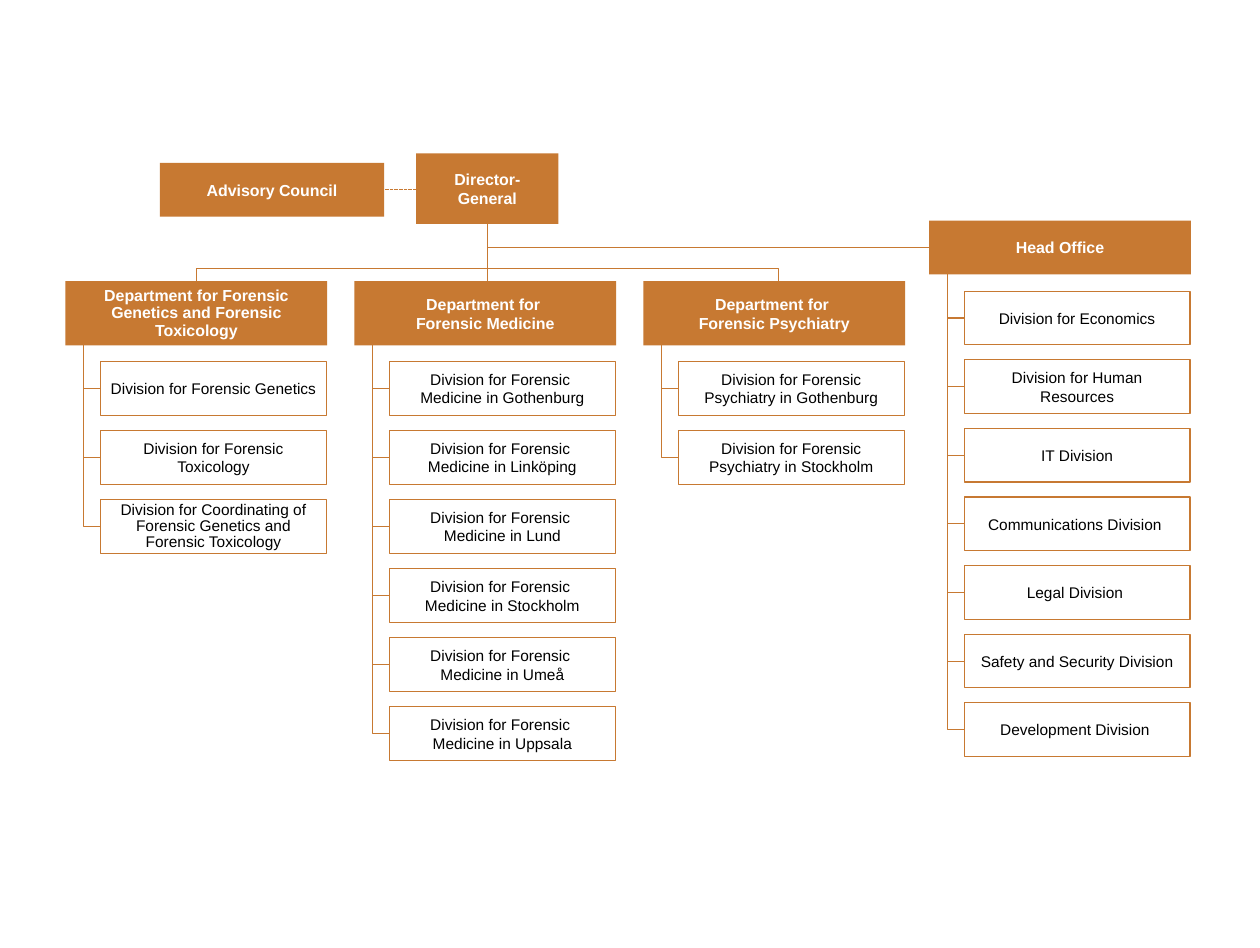
from lxml.etree import SubElement
from pptx import Presentation
from pptx.dml.color import RGBColor
from pptx.enum.dml import MSO_LINE
from pptx.enum.shapes import MSO_CONNECTOR, MSO_SHAPE
from pptx.enum.text import MSO_ANCHOR, PP_ALIGN
from pptx.oxml.ns import qn
from pptx.util import Cm, Pt

UNIT_WIDTH, DIVISION_WIDTH, DIVISION_INDENT = 5.8, 5.0, 0.78
ROW_HEIGHT = 1.19
DEPARTMENT_LEFT, DEPARTMENT_PITCH = 1.45, 6.4
DEPARTMENT_TOP, DEPARTMENT_HEIGHT = 6.23, 1.42
TRUNK_INDENT = 0.4
ROOT_X, BUS_Y, BUS_REACH = 10.8, 5.95, 7.09
MEDICINE_CITIES = ["Gothenburg", "Linköping", "Lund", "Stockholm", "Umeå", "Uppsala"]

DEPARTMENTS = [
    ("Department for Forensic Genetics and Forensic Toxicology", 11, [
        ("Division for Forensic Genetics", None),
        ("Division for Forensic Toxicology", None),
        ("Division for Coordinating of Forensic Genetics and Forensic Toxicology", 10),
    ]),
    ("Department for \vForensic Medicine", None,
     [(f"Division for Forensic \vMedicine in {city}", None) for city in MEDICINE_CITIES]),
    ("Department for \vForensic Psychiatry", None,
     [(f"Division for Forensic Psychiatry in {city}", None)
      for city in ("Gothenburg", "Stockholm")]),
]
HEAD_OFFICE_DIVISIONS = [
    (name, None) for name in (
        "Division for Economics", "Division for Human Resources", "IT Division",
        "Communications Division ", "Legal Division ",
        "Safety and Security Division", "Development Division ")
]


def rgb(hex_colour):
    """Turn a hex string into a colour."""
    return RGBColor.from_string(hex_colour)


class OrgChart:
    """Draws organisation chart elements on one slide in one style."""

    accent, paper, ink = "C77932", "FFFFFF", "000000"
    font_name = "Arial"

    def __init__(self, slide):
        """Keep the slide to draw on."""
        self.shapes = slide.shapes

    def line(self, x1, y1, x2, y2, kind=MSO_CONNECTOR.STRAIGHT):
        """Draw a thin connector and return it."""
        line = self.shapes.add_connector(kind, Cm(x1), Cm(y1), Cm(x2), Cm(y2))
        line.line.color.rgb = rgb(self.accent)
        line.line.width = Pt(0.75)
        SubElement(line._element.spPr, qn("a:effectLst"))
        return line

    def elbow(self, x1, y1, x2, y2, bend):
        """Draw a connector that turns at a share of its width."""
        elbow = self.line(x1, y1, x2, y2, MSO_CONNECTOR.ELBOW)
        geometry = elbow._element.spPr.find(qn("a:prstGeom"))
        SubElement(geometry.find(qn("a:avLst")), qn("a:gd"),
                   name="adj1", fmla=f"val {round(bend * 100000)}")

    def box(self, text, left, top, width, height, fill, colour, size, spacing):
        """Draw a rectangle with centred text and return it."""
        box = self.shapes.add_shape(
            MSO_SHAPE.RECTANGLE, Cm(left), Cm(top), Cm(width), Cm(height))
        box.shadow.inherit = False
        box.fill.solid()
        box.fill.fore_color.rgb = rgb(fill)
        frame = box.text_frame
        frame.word_wrap = True
        frame.vertical_anchor = MSO_ANCHOR.MIDDLE
        paragraph = frame.paragraphs[0]
        paragraph.text = text
        paragraph.alignment = PP_ALIGN.CENTER
        if spacing:
            paragraph.line_spacing = Pt(spacing)
        font = paragraph.font
        font.name, font.size = self.font_name, Pt(size)
        font.bold = fill == self.accent
        font.color.rgb = rgb(colour)
        return box

    def unit(self, text, left, top, width=UNIT_WIDTH, height=ROW_HEIGHT, spacing=None):
        """Draw a filled box for a leading unit."""
        box = self.box(text, left, top, width, height,
                       self.accent, self.paper, 10, spacing)
        box.line.fill.background()

    def division(self, text, left, top, spacing):
        """Draw an outlined box for a division."""
        box = self.box(text, left, top, DIVISION_WIDTH, ROW_HEIGHT,
                       self.paper, self.ink, 9.7, spacing)
        box.line.color.rgb = rgb(self.accent)
        box.line.width = Pt(0.75)
        box.text_frame.margin_left = box.text_frame.margin_right = Cm(0.2)

    def divisions(self, entries, unit_left, unit_bottom, first_top, pitch):
        """Hang a column of divisions from a trunk under their unit."""
        left = unit_left + DIVISION_INDENT
        for row, (text, spacing) in enumerate(entries):
            top = first_top + row * pitch
            self.elbow(unit_left + TRUNK_INDENT, unit_bottom,
                       left, top + ROW_HEIGHT / 2, 0)
            self.division(text, left, top, spacing)


def main():
    """Build the organisation chart and save it."""
    presentation = Presentation()
    presentation.slide_width, presentation.slide_height = Cm(27.91), Cm(21)
    chart = OrgChart(presentation.slides.add_slide(presentation.slide_layouts[6]))

    head_left, head_top = 20.58, 4.89
    head_middle = head_top + ROW_HEIGHT / 2
    for reach in (BUS_REACH, -BUS_REACH):
        chart.elbow(ROOT_X, BUS_Y, ROOT_X + reach, 6.63, 0.91)
    chart.line(ROOT_X, 4.95, ROOT_X, 6.58)
    chart.line(ROOT_X, head_middle, head_left, head_middle)
    advisory_link = chart.line(9.75, 4.2, 8.52, 4.2)
    advisory_link.line.dash_style = MSO_LINE.SQUARE_DOT

    chart.unit("Director-General", 9.22, 3.4, 3.15, 1.56)
    chart.unit("Advisory Council", 3.54, 3.61, 4.97)
    chart.unit("Head Office", head_left, head_top)
    chart.divisions(HEAD_OFFICE_DIVISIONS, head_left, head_top + ROW_HEIGHT, 6.45, 1.52)

    for column, (name, spacing, entries) in enumerate(DEPARTMENTS):
        left = DEPARTMENT_LEFT + column * DEPARTMENT_PITCH
        chart.unit(name, left, DEPARTMENT_TOP, height=DEPARTMENT_HEIGHT, spacing=spacing)
        chart.divisions(entries, left, DEPARTMENT_TOP + DEPARTMENT_HEIGHT, 8.01, 1.53)

    presentation.save("out.pptx")


if __name__ == "__main__":
    main()
